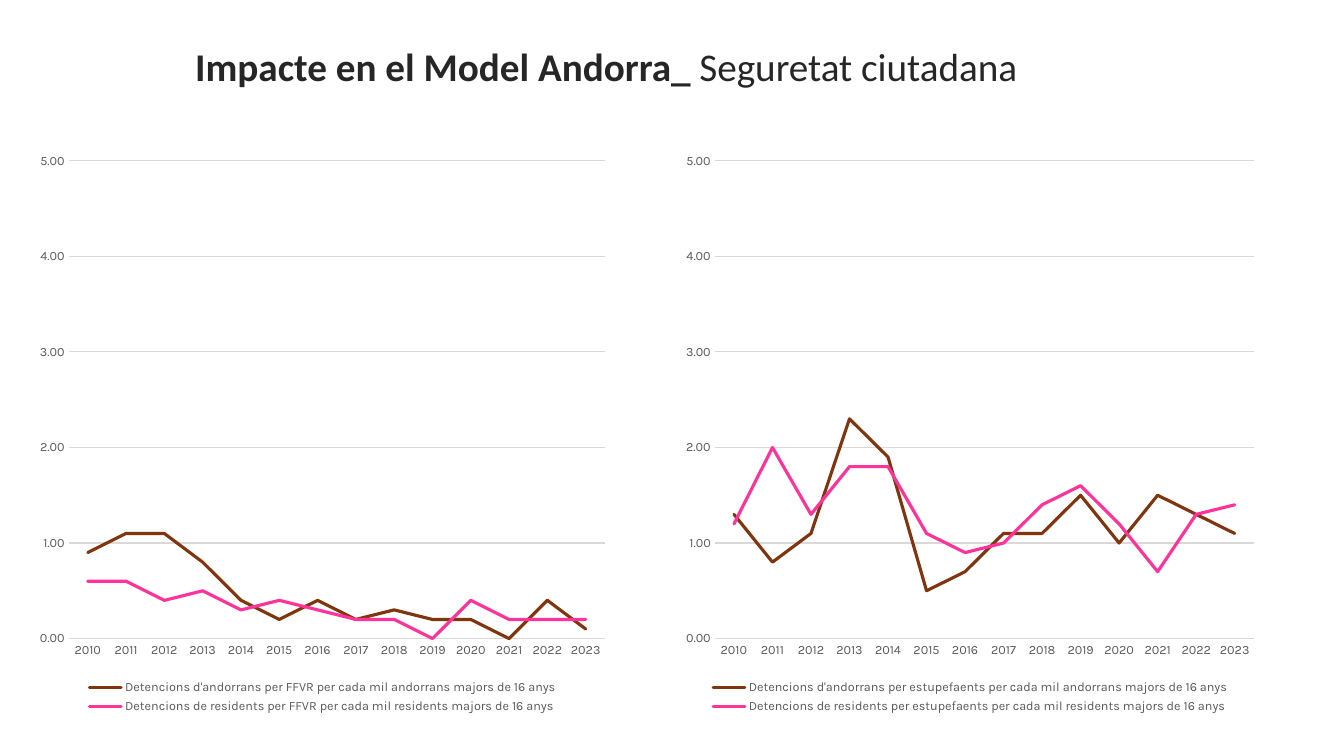
from pptx import Presentation
from pptx.chart.data import CategoryChartData
from pptx.dml.color import RGBColor
from pptx.enum.chart import XL_CHART_TYPE, XL_LEGEND_POSITION, XL_TICK_MARK
from pptx.enum.shapes import MSO_SHAPE
from pptx.enum.text import MSO_ANCHOR, PP_ALIGN
from pptx.oxml.ns import qn
from pptx.util import Cm, Pt

TITLE = [("Impacte en el Model Andorra_ ", True), ("Seguretat ciutadana", False)]
YEARS = [str(year) for year in range(2010, 2024)]
CHARTS = [
    {
        "left": 0.71,
        "width": 14.83,
        "series": {
            "Detencions d'andorrans per FFVR per cada mil andorrans majors de 16 anys":
                (0.9, 1.1, 1.1, 0.8, 0.4, 0.2, 0.4, 0.2, 0.3, 0.2, 0.2, 0, 0.4, 0.1),
            "Detencions de residents per FFVR per cada mil residents majors de 16 anys":
                (0.6, 0.6, 0.4, 0.5, 0.3, 0.4, 0.3, 0.2, 0.2, 0, 0.4, 0.2, 0.2, 0.2),
        },
    },
    {
        "left": 16.99,
        "width": 14.91,
        "series": {
            "Detencions d'andorrans per estupefaents per cada mil andorrans majors de 16 anys":
                (1.3, 0.8, 1.1, 2.3, 1.9, 0.5, 0.7, 1.1, 1.1, 1.5, 1, 1.5, 1.3, 1.1),
            "Detencions de residents per estupefaents per cada mil residents majors de 16 anys":
                (1.2, 2, 1.3, 1.8, 1.8, 1.1, 0.9, 1, 1.4, 1.6, 1.2, 0.7, 1.3, 1.4),
        },
    },
]

WHITE = RGBColor(0xFF, 0xFF, 0xFF)
INK = RGBColor(0x26, 0x26, 0x26)
BLACK = RGBColor(0, 0, 0)
GREY = RGBColor(0x59, 0x59, 0x59)
RULE = RGBColor(0xD9, 0xD9, 0xD9)
BROWN = RGBColor(0x80, 0x35, 0x0E)
PINK = RGBColor(0xFF, 0x33, 0x99)


def style_font(font, name, size, color):
    font.name = name
    font.size = Pt(size)
    font.color.rgb = color


def style_line(line, color, width):
    line.color.rgb = color
    line.width = Pt(width)


def add_title(page):
    box = page.shapes.add_shape(MSO_SHAPE.RECTANGLE, Cm(4.67), Cm(0.97), Cm(28.98), Cm(1.4))
    box.shadow.inherit = False
    box.fill.solid()
    box.fill.fore_color.rgb = WHITE
    style_line(box.line, WHITE, 1.5)
    box.text_frame.word_wrap = True
    box.text_frame.vertical_anchor = MSO_ANCHOR.MIDDLE
    para = box.text_frame.paragraphs[0]
    para.alignment = PP_ALIGN.LEFT
    style_font(para.font, "Calibri", 28, INK)
    for text, bold in TITLE:
        span = para.add_run()
        span.text = text
        span.font.bold = bold


def add_line_chart(page, left, width, series):
    data = CategoryChartData(number_format="0.00")
    data.categories = YEARS
    for name, values in series.items():
        data.add_series(name, values)
    chart = page.shapes.add_chart(
        XL_CHART_TYPE.LINE, Cm(left), Cm(3.58), Cm(width), Cm(14.5), data
    ).chart
    chart.has_title = False
    style_font(chart.font, "Karla", 10, BLACK)
    chart.has_legend = True
    chart.legend.position = XL_LEGEND_POSITION.BOTTOM
    chart.legend.include_in_layout = False

    years, rates = chart.category_axis, chart.value_axis
    for axis in (years, rates):
        axis.major_tick_mark = XL_TICK_MARK.NONE
        axis.minor_tick_mark = XL_TICK_MARK.NONE
    for part in (years.tick_labels, rates.tick_labels, chart.legend):
        style_font(part.font, "Karla", 9, GREY)
    style_line(years.format.line, RULE, 0.75)
    rates.format.line.fill.background()
    rates.minimum_scale = 0
    rates.maximum_scale = 5
    rates.major_unit = 1
    rates.has_major_gridlines = True
    style_line(rates.major_gridlines.format.line, RULE, 0.75)
    rates.tick_labels.number_format = "0.00"
    rates.tick_labels.number_format_is_linked = False

    chart.plots[0].vary_by_categories = False
    for line, color in zip(chart.plots[0].series, (BROWN, PINK)):
        line.smooth = False
        style_line(line.format.line, color, 2.25)
        line._element.find(qn("c:spPr")).find(qn("a:ln")).set("cap", "rnd")


def main():
    deck = Presentation()
    deck.slide_width, deck.slide_height = Cm(33.87), Cm(19.05)
    page = deck.slides.add_slide(deck.slide_layouts[6])
    add_title(page)
    for content in CHARTS:
        add_line_chart(page, **content)
    deck.save("out.pptx")


if __name__ == "__main__":
    main()
